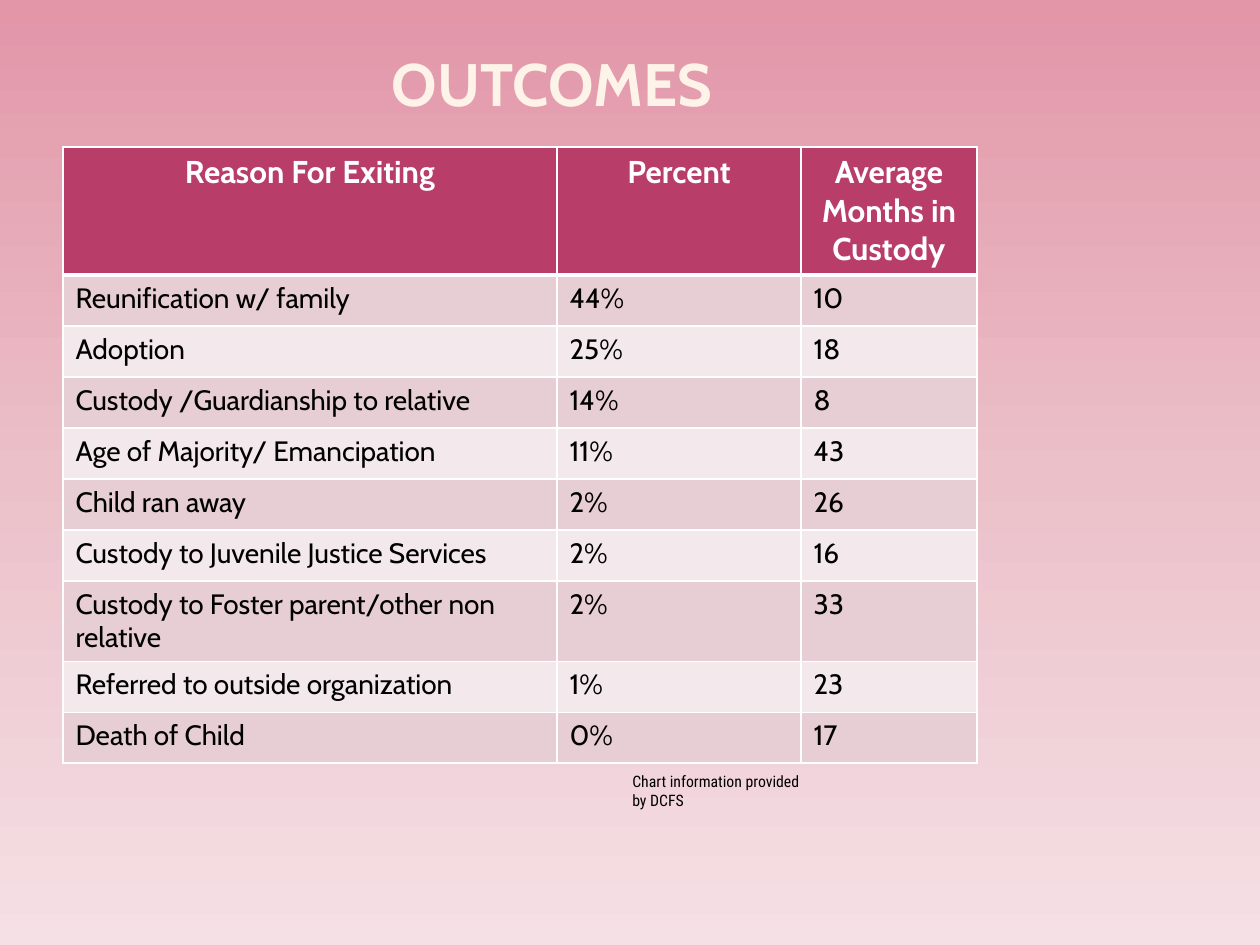
from copy import deepcopy
from dataclasses import dataclass

from lxml import etree
from pptx import Presentation
from pptx import util as u
from pptx.dml.color import RGBColor
from pptx.enum import text
from pptx.oxml import ns


@dataclass(frozen=True)
class Theme:
    backdrop: tuple = ((0, "E296A8"), (50, "EBC0C9"), (100, "F5E0E5"))
    title: str = "FEF3E8"
    header: str = "B83D68"
    bands: tuple = ("E6CED4", "F3E8EB")
    light: str = "FFFFFF"
    dark: str = "000000"
    font: str = "Cabin"
    source_font: str = "Roboto Condensed"
    title_size: float = 34.2
    header_size: int = 18
    body_size: int = 16
    source_size: int = 9
    rule: int = 1
    header_rule: int = 3


OUTCOMES = [
    ("Reason For Exiting", "Percent", "Average Months in Custody"),
    ("Reunification w/ family", "44%", "10"),
    ("Adoption", "25%", "18"),
    ("Custody /Guardianship to relative", "14%", "8"),
    ("Age of Majority/ Emancipation", "11%", "43"),
    ("Child ran away", "2%", "26"),
    ("Custody to Juvenile Justice Services", "2%", "16"),
    ("Custody to Foster parent/other non relative", "2%", "33"),
    ("Referred to outside organization", "1%", "23"),
    ("Death of Child", "0%", "17"),
]


class SlideBuilder:
    """Draws styled elements on one slide, with lengths in px."""

    def __init__(self, deck, theme):
        self.theme = theme
        self.slide = deck.slides.add_slide(deck.slide_layouts[5])

    @staticmethod
    def px(*lengths):
        return [u.Emu(round(length * 914400 / 126)) for length in lengths]

    def set_words(self, frame, words, size, color, font=None, bold=False, align=None):
        frame.text = words
        for paragraph in frame.paragraphs:
            paragraph.alignment = align
            for run in paragraph.runs:
                run.font.name = font or self.theme.font
                run.font.size = u.Pt(size)
                run.font.bold = bold
                run.font.color.rgb = RGBColor.from_string(color)

    def background(self):
        fill = self.slide.background.fill
        fill.gradient()
        fill.gradient_angle = 270
        stops = next(self.slide.element.iter(ns.qn("a:gsLst")))
        stops.insert(1, deepcopy(stops[0]))
        for stop, (percent, color) in zip(fill.gradient_stops, self.theme.backdrop):
            stop.position = percent / 100
            stop.color.rgb = RGBColor.from_string(color)

    def title(self, words, *box):
        heading = self.slide.shapes.title
        heading.left, heading.top, heading.width, heading.height = self.px(*box)
        frame = heading.text_frame
        frame.auto_size = text.MSO_AUTO_SIZE.NONE
        frame.vertical_anchor = text.MSO_ANCHOR.BOTTOM
        frame.margin_left = frame.margin_right = u.Inches(0.05)
        frame.margin_top = frame.margin_bottom = 0
        self.set_words(frame, words, self.theme.title_size, self.theme.title,
                       bold=True, align=text.PP_ALIGN.CENTER)

    def borders(self, cell, **widths):
        properties = cell._tc.get_or_add_tcPr()
        for side in "LRTB":
            width = u.Pt(widths.get(side, self.theme.rule))
            line = etree.SubElement(properties, ns.qn(f"a:ln{side}"), w=str(width))
            fill = etree.SubElement(line, ns.qn("a:solidFill"))
            etree.SubElement(fill, ns.qn("a:srgbClr"), val=self.theme.light)

    def table(self, rows, left, top, columns, row_height):
        theme = self.theme
        grid = self.slide.shapes.add_table(
            len(rows), len(columns),
            *self.px(left, top, sum(columns), row_height * len(rows))).table
        for column, width in zip(grid.columns, self.px(*columns)):
            column.width = width
        for index, (row, values) in enumerate(zip(grid.rows, rows)):
            row.height, = self.px(row_height)
            for cell, words in zip(row.cells, values):
                if index == 0:
                    self.borders(cell, B=theme.header_rule)
                    color = theme.header
                    self.set_words(cell.text_frame, words, theme.header_size, theme.light,
                                   bold=True, align=text.PP_ALIGN.CENTER)
                else:
                    self.borders(cell, T=theme.header_rule if index == 1 else theme.rule)
                    color = theme.bands[(index - 1) % 2]
                    self.set_words(cell.text_frame, words, theme.body_size, theme.dark)
                cell.fill.solid()
                cell.fill.fore_color.rgb = RGBColor.from_string(color)

    def source(self, words, *box):
        frame = self.slide.shapes.add_textbox(*self.px(*box)).text_frame
        frame.word_wrap = True
        frame.auto_size = text.MSO_AUTO_SIZE.SHAPE_TO_FIT_TEXT
        self.set_words(frame, words, self.theme.source_size, self.theme.dark,
                       font=self.theme.source_font)


def main():
    deck = Presentation()
    deck.slide_width, deck.slide_height = SlideBuilder.px(1260, 945)
    builder = SlideBuilder(deck, Theme())
    builder.background()
    builder.title("OUTCOMES", 53, 42, 998, 76)
    builder.table(OUTCOMES, 63, 147, columns=(494, 244, 176), row_height=51)
    builder.source("Chart information provided by DCFS", 620, 766, 204, 32)
    deck.save("out.pptx")


if __name__ == "__main__":
    main()
